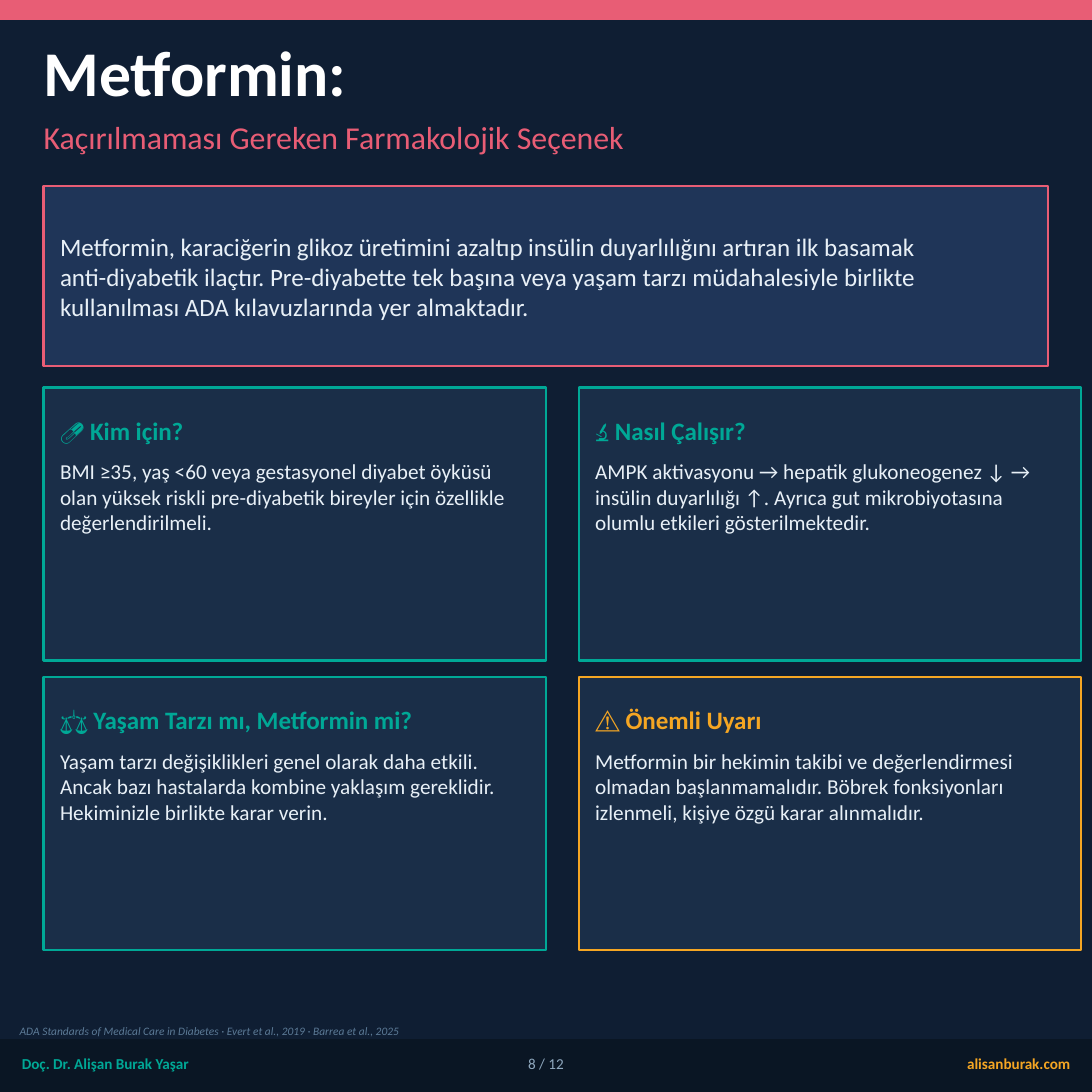
from dataclasses import dataclass
from itertools import product

from pptx import Presentation
from pptx.dml.color import RGBColor
from pptx.enum.shapes import MSO_SHAPE
from pptx.enum.text import MSO_ANCHOR, PP_ALIGN
from pptx.util import Pt

RECTANGLE = MSO_SHAPE.RECTANGLE
TOP, MIDDLE = MSO_ANCHOR.TOP, MSO_ANCHOR.MIDDLE
LEFT, CENTER, RIGHT = PP_ALIGN.LEFT, PP_ALIGN.CENTER, PP_ALIGN.RIGHT

EN_SPACE = " "
SIDE = 720
MARGIN = 28.8
CONTENT_WIDTH = 662.4
PADDING = 10.8
CARD_WIDTH, CARD_HEIGHT = 331.2, 180
CARD_TOP = 255.6
COLUMN_GAP, ROW_GAP = 21.6, 10.8
FOOTER_TOP, FOOTER_HEIGHT = 685.44, 34.56
FOOTER_TEXT_TOP, FOOTER_TEXT_HEIGHT = 686.88, 28.8


@dataclass(frozen=True)
class Theme:
    font: str = "Calibri"
    background: str = "0F1E33"
    panel: str = "1F3558"
    card: str = "1A2E48"
    footer: str = "0A1624"
    rose: str = "E85D75"
    teal: str = "00A896"
    amber: str = "F5A623"
    white: str = "FFFFFF"
    body: str = "E8F0F7"
    muted: str = "8FA8BE"
    source: str = "5C7A96"
    title_size: float = 42
    subtitle_size: float = 21
    lead_size: float = 16.5
    body_size: float = 14
    footer_size: float = 10
    source_size: float = 7.5


class SlideBuilder:
    def __init__(self, slide, theme):
        self.slide = slide
        self.theme = theme

    def background(self, color):
        fill = self.slide.background.fill
        fill.solid()
        fill.fore_color.rgb = RGBColor.from_string(color)

    def box(self, left, top, width, height, fill, line, line_width=1):
        shape = self.slide.shapes.add_shape(
            RECTANGLE, Pt(left), Pt(top), Pt(width), Pt(height))
        shape.shadow.inherit = False
        shape.fill.solid()
        shape.fill.fore_color.rgb = RGBColor.from_string(fill)
        shape.line.color.rgb = RGBColor.from_string(line)
        shape.line.width = Pt(line_width)

    def text(self, left, top, width, height, paragraphs, size, color,
             anchor=MIDDLE, align=LEFT, **style):
        frame = self.slide.shapes.add_textbox(
            Pt(left), Pt(top), Pt(width), Pt(height)).text_frame
        layout = {"word_wrap": True, "vertical_anchor": anchor,
                  "margin_left": 0, "margin_right": 0,
                  "margin_top": 0, "margin_bottom": 0}
        for name, value in layout.items():
            setattr(frame, name, value)
        frame.text = "\n".join(paragraphs)
        font_format = {"name": self.theme.font, "size": Pt(size), **style}
        for paragraph in frame.paragraphs:
            paragraph.alignment = align
            for run in paragraph.runs:
                for name, value in font_format.items():
                    setattr(run.font, name, value)
                run.font.color.rgb = RGBColor.from_string(color)

    def card(self, left, top, icon, heading, explanation, accent):
        theme = self.theme
        inner_left = left + PADDING
        inner_width = CARD_WIDTH - 2 * PADDING
        self.box(left, top, CARD_WIDTH, CARD_HEIGHT, theme.card, accent, 1.5)
        self.text(inner_left, top + PADDING, inner_width, 34.56,
                  [icon + EN_SPACE + heading], theme.lead_size, accent, bold=True)
        self.text(inner_left, top + 46.8, inner_width, 126,
                  [explanation], theme.body_size, theme.body, anchor=TOP)

    def footer_text(self, left, width, wording, color, align, bold=False):
        self.text(left, FOOTER_TEXT_TOP, width, FOOTER_TEXT_HEIGHT, [wording],
                  self.theme.footer_size, color, align=align, bold=bold)


def main():
    presentation = Presentation()
    presentation.slide_width = presentation.slide_height = Pt(SIDE)
    theme = Theme()
    builder = SlideBuilder(
        presentation.slides.add_slide(presentation.slide_layouts[6]), theme)

    builder.background(theme.background)
    builder.box(0, 0, SIDE, 12.96, theme.rose, theme.rose)
    builder.text(MARGIN, 21.6, CONTENT_WIDTH, 50.4, ["Metformin:"],
                 theme.title_size, theme.white, bold=True)
    builder.text(MARGIN, 72, CONTENT_WIDTH, 36,
                 ["Kaçırılmaması Gereken Farmakolojik Seçenek"],
                 theme.subtitle_size, theme.rose)

    introduction = [
        "Metformin, karaciğerin glikoz üretimini azaltıp insülin duyarlılığını artıran ilk basamak",
        "anti-diyabetik ilaçtır. Pre-diyabette tek başına veya yaşam tarzı müdahalesiyle birlikte",
        "kullanılması ADA kılavuzlarında yer almaktadır.",
    ]
    builder.box(MARGIN, 122.4, CONTENT_WIDTH, 118.8, theme.panel, theme.rose, 1.5)
    builder.text(MARGIN + PADDING, 127.44, 648, 109.44, introduction,
                 theme.lead_size, theme.body)

    cards = [
        ("💊", "Kim için?",
         "BMI ≥35, yaş <60 veya gestasyonel diyabet öyküsü olan yüksek riskli "
         "pre-diyabetik bireyler için özellikle değerlendirilmeli.", theme.teal),
        ("🔬", "Nasıl Çalışır?",
         "AMPK aktivasyonu → hepatik glukoneogenez ↓ → insülin duyarlılığı ↑. "
         "Ayrıca gut mikrobiyotasına olumlu etkileri gösterilmektedir.", theme.teal),
        ("⚖️", "Yaşam Tarzı mı, Metformin mi?",
         "Yaşam tarzı değişiklikleri genel olarak daha etkili. Ancak bazı hastalarda "
         "kombine yaklaşım gereklidir. Hekiminizle birlikte karar verin.", theme.teal),
        ("⚠️", "Önemli Uyarı",
         "Metformin bir hekimin takibi ve değerlendirmesi olmadan başlanmamalıdır. "
         "Böbrek fonksiyonları izlenmeli, kişiye özgü karar alınmalıdır.", theme.amber),
    ]
    for (row, column), card in zip(product(range(2), repeat=2), cards):
        builder.card(MARGIN + column * (CARD_WIDTH + COLUMN_GAP),
                     CARD_TOP + row * (CARD_HEIGHT + ROW_GAP), *card)

    builder.box(0, FOOTER_TOP, SIDE, FOOTER_HEIGHT, theme.footer, theme.footer)
    builder.footer_text(14.4, 288, "Doç. Dr. Alişan Burak Yaşar",
                        theme.teal, LEFT, bold=True)
    builder.text(12.96, 672.48, 691.2, 14.4,
                 ["ADA Standards of Medical Care in Diabetes · Evert et al., 2019 · Barrea et al., 2025"],
                 theme.source_size, theme.source, italic=True)
    builder.footer_text(468, 237.6, "alisanburak.com", theme.amber, RIGHT, bold=True)
    builder.footer_text(309.6, 100.8, "8 / 12", theme.muted, CENTER)

    presentation.save("out.pptx")


if __name__ == "__main__":
    main()
